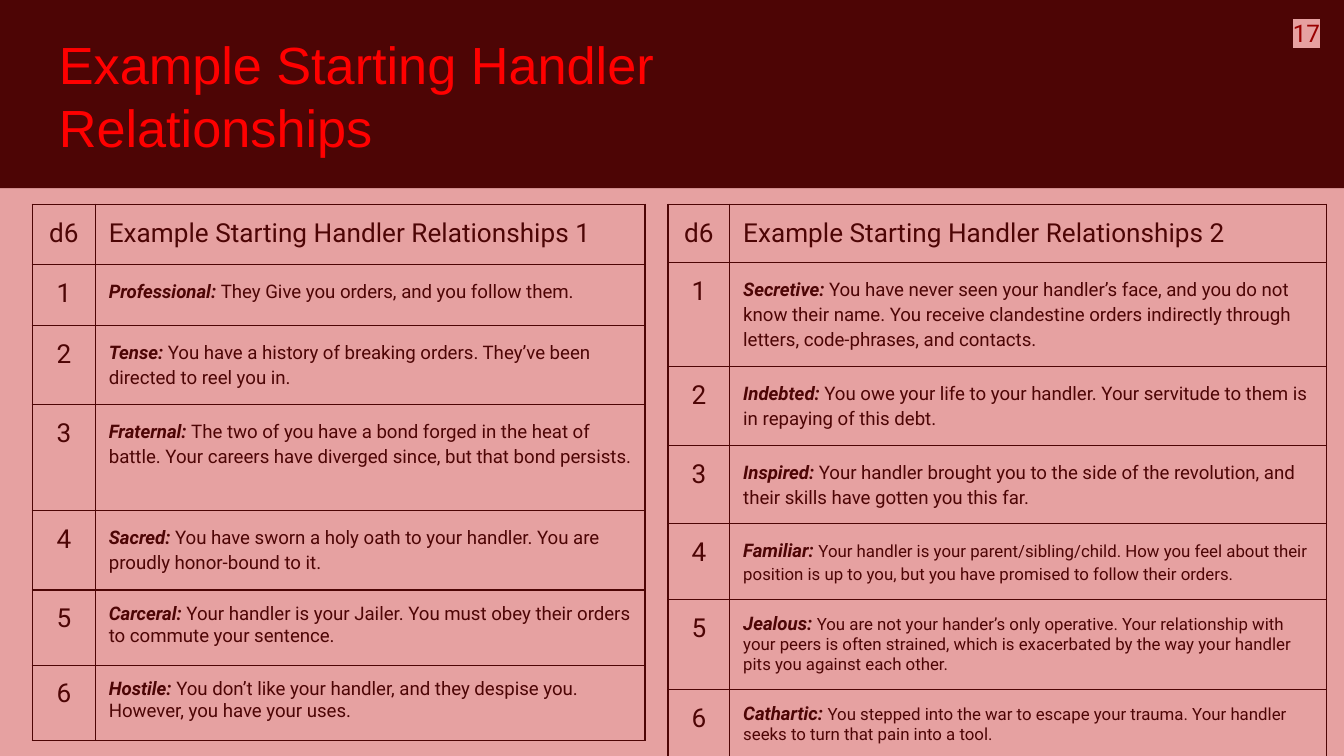
from lxml import etree
from pptx import Presentation
from pptx import util as u
from pptx.dml.color import RGBColor
from pptx.enum import shapes, text
from pptx.oxml import parse_xml
from pptx.oxml.ns import nsdecls, qn

RELATIONSHIPS_1 = [
    ("Professional", "They Give you orders, and you follow them.", 10),
    ("Tense", "You have a history of breaking orders. They’ve been directed to reel you in.", 10),
    ("Fraternal", "The two of you have a bond forged in the heat of battle. "
     "Your careers have diverged since, but that bond persists.", 10),
    ("Sacred", "You have sworn a holy oath to your handler. You are proudly honor-bound to it.", 10),
    ("Carceral", "Your handler is your Jailer. You must obey their orders to commute your sentence.", 10),
    ("Hostile", "You don’t like your handler, and they despise you. However, you have your uses.", 10),
]
RELATIONSHIPS_2 = [
    ("Secretive", "You have never seen your handler’s face, and you do not know their name. "
     "You receive clandestine orders indirectly through letters, code-phrases, and contacts.", 10),
    ("Indebted", "You owe your life to your handler. Your servitude to them is in repaying of this debt.", 10),
    ("Inspired", "Your handler brought you to the side of the revolution, "
     "and their skills have gotten you this far.", 10),
    ("Familiar", "Your handler is your parent/sibling/child. How you feel about their position "
     "is up to you, but you have promised to follow their orders.", 9),
    ("Jealous", "You are not your hander’s only operative. Your relationship with your peers is often "
     "strained, which is exacerbated by the way your handler pits you against each other.", 9),
    ("Cathartic", "You stepped into the war to escape your trauma. "
     "Your handler seeks to turn that pain into a tool.", 9),
]


def color(value):
    return RGBColor.from_string(value)


class HandlerSlide:
    dark = "4D0505"
    pink = "E6A1A1"
    font = "Roboto"
    inset = u.Inches(0.1)
    table_size = u.Inches(3.28)
    loose_rows = 4

    def __init__(self, presentation):
        self.slide = presentation.slides.add_slide(presentation.slide_layouts[6])
        fill = self.slide.background.fill
        fill.solid()
        fill.fore_color.rgb = color(self.pink)

    def style(self, paragraph, size, font, hex_color, align=text.PP_ALIGN.LEFT):
        paragraph.alignment = align
        paragraph.font.name = font
        paragraph.font.color.rgb = color(hex_color)
        if size:
            paragraph.font.size = u.Pt(size)

    def loosen(self, paragraph):
        paragraph.line_spacing = 1.15
        paragraph.space_after = u.Pt(16)

    def band(self, width, height):
        shape = self.slide.shapes.add_shape(
            shapes.MSO_SHAPE.RECTANGLE, 0, 0, u.Inches(width), u.Inches(height))
        shape.shadow.inherit = False
        shape.fill.solid()
        shape.fill.fore_color.rgb = color(self.dark)
        shape.line.fill.background()

    def text_box(self, box, content):
        shape = self.slide.shapes.add_textbox(*map(u.Inches, box))
        frame = shape.text_frame
        frame.word_wrap = True
        frame.vertical_anchor = text.MSO_ANCHOR.TOP
        frame.margin_left = frame.margin_right = self.inset
        frame.margin_top = frame.margin_bottom = self.inset
        paragraph = frame.paragraphs[0]
        paragraph.add_run().text = content
        return paragraph

    def title(self, box, content):
        paragraph = self.text_box(box, content)
        self.style(paragraph, 28, "Arial", "FF0000")

    def page_number(self, box, content):
        paragraph = self.text_box(box, content)
        self.style(paragraph, 13, self.font, "990000", text.PP_ALIGN.RIGHT)
        self.loosen(paragraph)
        properties = paragraph.runs[0]._r.get_or_add_rPr()
        highlight = etree.SubElement(properties, qn("a:highlight"))
        etree.SubElement(highlight, qn("a:srgbClr"), val=self.pink)

    def cell(self, cell):
        cell.margin_left = cell.margin_right = self.inset
        cell.margin_top = cell.margin_bottom = self.inset
        properties = cell._tc.get_or_add_tcPr()
        for side in "LRTB":
            properties.append(parse_xml(
                f'<a:ln{side} {nsdecls("a")} w="{u.Pt(0.75)}"><a:solidFill>'
                f'<a:srgbClr val="{self.dark}"/></a:solidFill></a:ln{side}>'))
        cell.fill.background()
        return cell.text_frame.paragraphs[0]

    def label(self, cell, content, align=text.PP_ALIGN.LEFT):
        paragraph = self.cell(cell)
        paragraph.add_run().text = content
        self.style(paragraph, 14, self.font, self.dark, align)

    def description(self, cell, name, content, size, loose):
        paragraph = self.cell(cell)
        self.style(paragraph, None, self.font, self.dark)
        if loose:
            self.loosen(paragraph)
        for words, points, strong in ((f"{name}: ", 10, True), (content, size, False)):
            run = paragraph.add_run()
            run.text = words
            run.font.size = u.Pt(points)
            run.font.bold = run.font.italic = strong

    def table(self, left, top, widths, heights, heading, entries):
        frame = self.slide.shapes.add_table(
            len(heights), len(widths), u.Inches(left), u.Inches(top),
            self.table_size, self.table_size)
        table = frame.table
        table.first_row = table.horz_banding = False
        for column, width in zip(table.columns, widths):
            column.width = u.Inches(width)
        for row, height in zip(table.rows, heights):
            row.height = u.Inches(height)
        frame.width = frame.height = self.table_size
        self.label(table.cell(0, 0), "d6", text.PP_ALIGN.CENTER)
        self.label(table.cell(0, 1), heading)
        for roll, (name, content, size) in enumerate(entries, 1):
            self.label(table.cell(roll, 0), str(roll), text.PP_ALIGN.CENTER)
            self.description(table.cell(roll, 1), name, content, size, roll <= self.loose_rows)


def main():
    presentation = Presentation()
    presentation.slide_width = u.Inches(10)
    presentation.slide_height = u.Inches(10 * 9 / 16)
    page = HandlerSlide(presentation)
    page.band(10, 1.4)
    page.title((0.34, 0.14, 4.94, 1.09), "Example Starting Handler Relationships")
    page.page_number((9.18, 0, 0.74, 0.7), "17")
    page.table(0.24, 1.52, (0.47, 4.09), (0.45, 0.45, 0.59, 0.79, 0.59, 0.56, 0.56),
               "Example Starting Handler Relationships 1", RELATIONSHIPS_1)
    page.table(4.97, 1.52, (0.46, 4.44), (0.33, 0.58, 0.31, 0.43, 0.43, 0.43, 0.43),
               "Example Starting Handler Relationships 2", RELATIONSHIPS_2)
    presentation.save("out.pptx")


if __name__ == "__main__":
    main()
